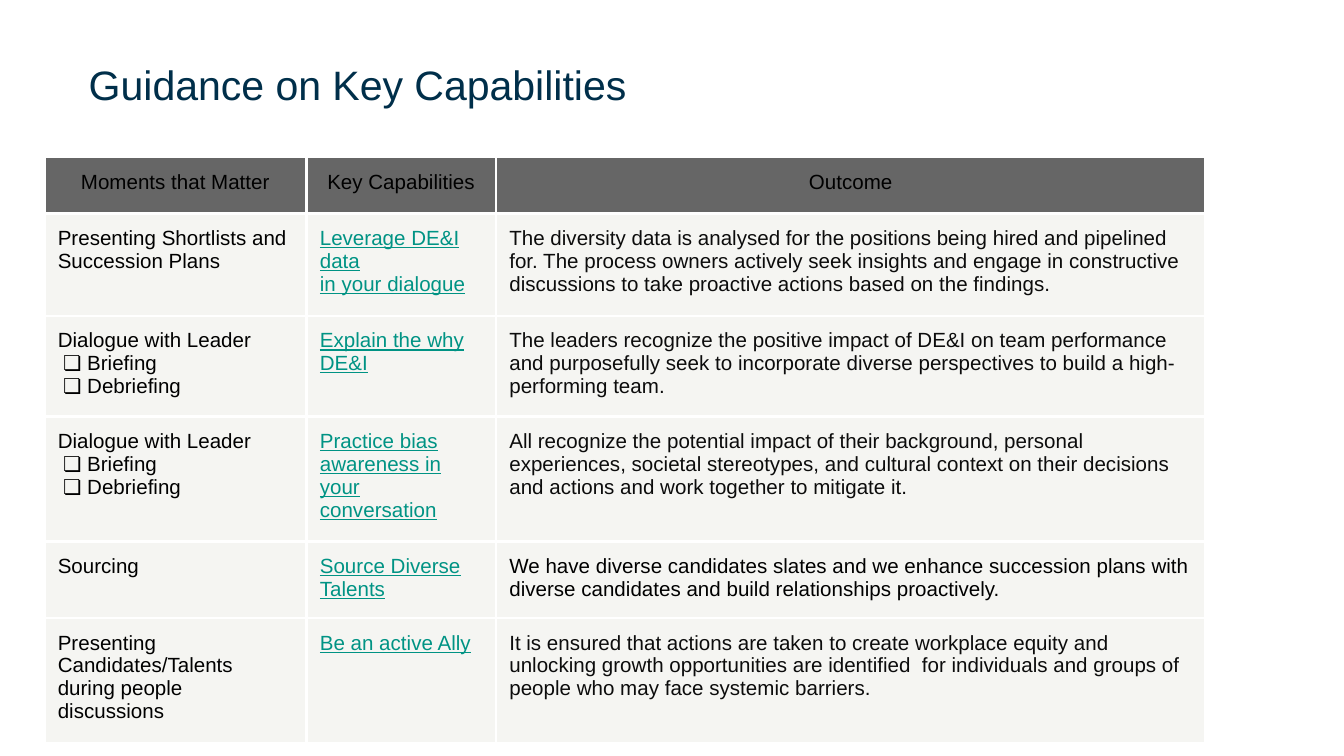
from dataclasses import dataclass
from typing import Optional

from lxml import etree
from pptx import Presentation
from pptx.dml.color import RGBColor
from pptx.enum import text as t
from pptx.oxml import ns
from pptx.util import Inches, Pt


@dataclass(frozen=True)
class Theme:
    font: str = "Arial"
    title: str = "002F4A"
    ink: str = "000000"
    soft: str = "0C0C0C"
    link: str = "009384"
    head: str = "666666"
    body: str = "F5F5F2"
    rule: str = "FFFFFF"
    big: int = 22
    small: int = 11
    line: float = 1.5


@dataclass(frozen=True)
class Row:
    height: float
    moment: str
    skill: str
    outcome: str
    steps: tuple[str, ...] = ()
    color: Optional[str] = None


THEME = Theme()
WIDE = 10
LEFT, TOP, PAD = 0.33, 1.17, 0.1
WIDTHS = (1.95, 1.41, 5.28)
HEADS = ("Moments that Matter", "Key Capabilities", "Outcome")
HEAD_H = 0.42
STEPS = (" Briefing", " Debriefing")
ROWS = (
    Row(0.76, "Presenting Shortlists and Succession Plans",
        "Leverage DE&I data\nin your dialogue",
        "The diversity data is analysed for the positions being hired and "
        "pipelined for. The process owners actively seek insights and engage "
        "in constructive discussions to take proactive actions based on the "
        "findings."),
    Row(0.75, "Dialogue with Leader", "Explain the why DE&I",
        "The leaders recognize the positive impact of DE&I on team "
        "performance and purposefully seek to incorporate diverse "
        "perspectives to build a high-performing team.", STEPS),
    Row(0.93, "Dialogue with Leader",
        "Practice bias awareness in your conversation",
        "All recognize the potential impact of their background, personal "
        "experiences, societal stereotypes, and cultural context on their "
        "decisions and actions and work together to mitigate it.", STEPS),
    Row(0.57, "Sourcing", "Source Diverse Talents",
        "We have diverse candidates slates and we enhance succession plans "
        "with diverse candidates and build relationships proactively.",
        color=THEME.ink),
    Row(0.93, "Presenting Candidates/Talents during people discussions",
        "Be an active Ally",
        "It is ensured that actions are taken to create workplace equity and "
        "unlocking growth opportunities are identified  for individuals and "
        "groups of people who may face systemic barriers."),
)


def style(para, size: int, color: str, under: bool = False) -> None:
    for run in para.runs:
        font = run.font
        font.name, font.size = THEME.font, Pt(size)
        font.color.rgb = RGBColor.from_string(color)
        if under:
            font.underline = True


def add_rules(cell) -> None:
    """Draw the same line on all four sides; call before the fill is set."""
    props = cell._tc.get_or_add_tcPr()
    for side in ("lnL", "lnR", "lnT", "lnB"):
        line = etree.SubElement(props, ns.qn(f"a:{side}"), w=str(Pt(THEME.line)))
        fill = etree.SubElement(line, ns.qn("a:solidFill"))
        etree.SubElement(fill, ns.qn("a:srgbClr"), val=THEME.rule)


def add_bullet(para) -> None:
    props = para._p.get_or_add_pPr()
    props.set("marL", str(Inches(0.12)))
    props.set("indent", str(Inches(-0.08)))
    tint = etree.SubElement(props, ns.qn("a:buClr"))
    etree.SubElement(tint, ns.qn("a:srgbClr"), val=THEME.ink)
    etree.SubElement(props, ns.qn("a:buSzPts"), val=str(THEME.small * 100))
    etree.SubElement(props, ns.qn("a:buFont"), typeface=THEME.font)
    etree.SubElement(props, ns.qn("a:buChar"), char="❏")


def fill_cell(cell, words: str, color: str, back: str, under: bool = False,
              align=t.PP_ALIGN.LEFT, steps: tuple[str, ...] = ()) -> None:
    add_rules(cell)
    cell.fill.solid()
    cell.fill.fore_color.rgb = RGBColor.from_string(back)
    cell.margin_left = cell.margin_right = Inches(PAD)
    cell.margin_top = cell.margin_bottom = Inches(PAD)
    cell.vertical_anchor = t.MSO_ANCHOR.TOP
    frame = cell.text_frame
    frame.text = words
    for step in steps:
        para = frame.add_paragraph()
        add_bullet(para)
        para.text = step
    for para in frame.paragraphs:
        para.alignment = align
        style(para, THEME.small, color, under)


def add_title(slide, words: str) -> None:
    title = slide.shapes.title
    title.left, title.top = Inches(0.62), Inches(0.47)
    title.width, title.height = Inches(8.13), Inches(0.63)
    frame = title.text_frame
    frame.text = words
    frame.word_wrap = True
    frame.auto_size = t.MSO_AUTO_SIZE.NONE
    frame.vertical_anchor = t.MSO_ANCHOR.TOP
    frame.margin_left = frame.margin_right = Inches(0.04)
    frame.margin_top = frame.margin_bottom = Inches(0.04)
    para = frame.paragraphs[0]
    para.alignment = t.PP_ALIGN.LEFT
    para.line_spacing = 0.8
    style(para, THEME.big, THEME.title)


def add_grid(slide) -> None:
    tall = (HEAD_H, *(row.height for row in ROWS))
    grid = slide.shapes.add_table(
        len(tall), len(WIDTHS), Inches(LEFT), Inches(TOP),
        Inches(sum(WIDTHS)), Inches(sum(tall))).table
    grid.first_row = grid.horz_banding = False
    for col, width in zip(grid.columns, WIDTHS):
        col.width = Inches(width)
    for line, height in zip(grid.rows, tall):
        line.height = Inches(height)
    for col, head in enumerate(HEADS):
        fill_cell(grid.cell(0, col), head, THEME.ink, THEME.head,
                  align=t.PP_ALIGN.CENTER)
    for num, row in enumerate(ROWS, 1):
        fill_cell(grid.cell(num, 0), row.moment, THEME.ink, THEME.body,
                  steps=row.steps)
        fill_cell(grid.cell(num, 1), row.skill, THEME.link, THEME.body,
                  under=True)
        fill_cell(grid.cell(num, 2), row.outcome, row.color or THEME.soft,
                  THEME.body)


def main() -> None:
    deck = Presentation()
    deck.slide_width, deck.slide_height = Inches(WIDE), Inches(WIDE * 9 / 16)
    slide = deck.slides.add_slide(deck.slide_layouts[5])
    add_grid(slide)
    add_title(slide, "Guidance on Key Capabilities")
    deck.save("out.pptx")


if __name__ == "__main__":
    main()
